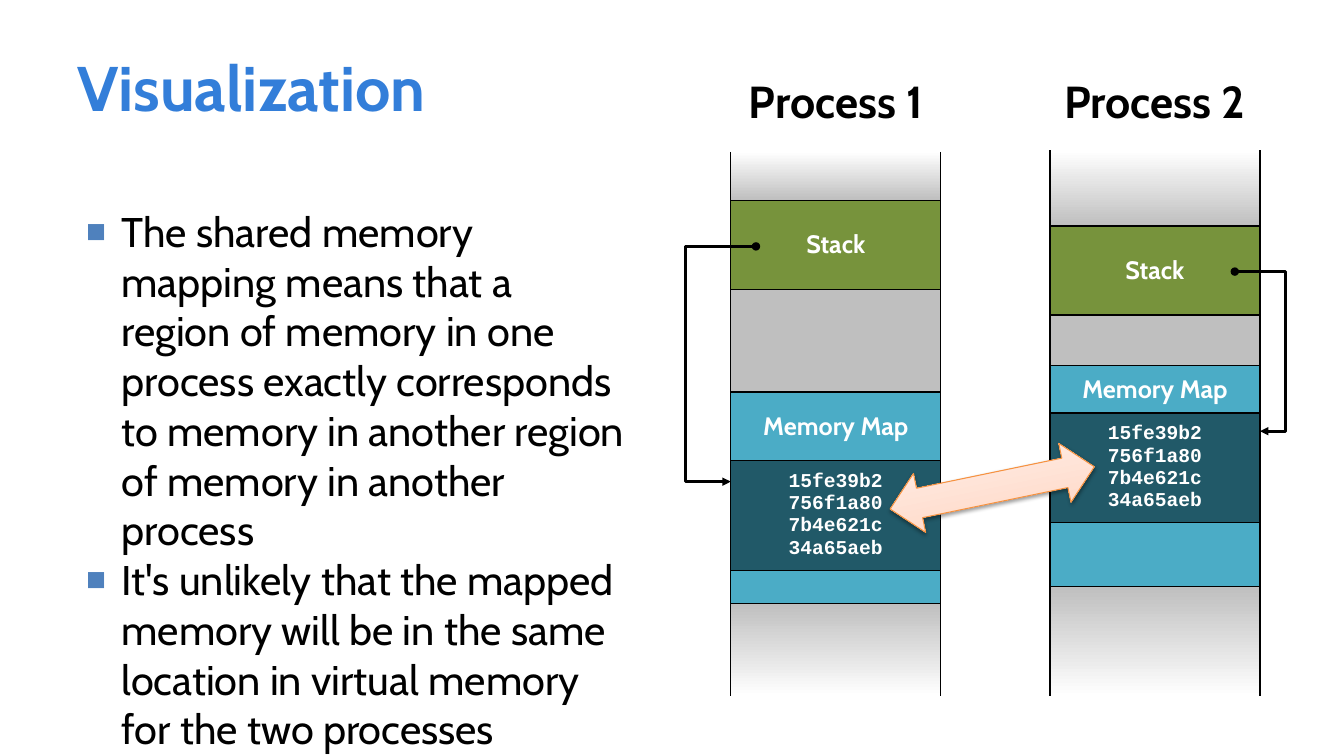
from lxml import etree
from pptx import Presentation
from pptx import util as u
from pptx.dml.color import RGBColor
from pptx.enum import shapes, text
from pptx.oxml.ns import qn

Pt = u.Pt
COLORS = {
    "title": "337ED9", "black": "000000", "white": "FFFFFF",
    "bullet": "4F81BD", "gap": "BFBFBF", "stack": "77933C",
    "map": "4BACC6", "shared": "215968", "arrow_line": "F69240",
    "arrow_dark": "FFD2BD", "arrow_light": "FFF2ED",
}
SHARED_BYTES = "15fe39b2\n756f1a80\n7b4e621c\n34a65aeb"
REGIONS = [
    ("", ("white", "gap"), "LRB"),
    ("Stack", "stack", "LRTB"),
    ("", "gap", "LRTB"),
    ("Memory Map", "map", "LRTB"),
    (SHARED_BYTES, "shared", "LRTB"),
    ("", "map", "LRTB"),
    ("", ("gap", "white"), "LRT"),
]
POINTS = [
    "The shared memory mapping means that a region of memory in one process "
    "exactly corresponds to memory in another region of memory in another process",
    "It's unlikely that the mapped memory will be in the same location in "
    "virtual memory for the two processes",
]


def rgb(name):
    return RGBColor.from_string(COLORS[name])


def add_xml(parent, tag, **attrs):
    el = etree.SubElement(parent, qn(tag))
    for key, value in attrs.items():
        el.set(key, str(value))
    return el


def place(sp, left, top, width, height):
    sp.left, sp.top, sp.width, sp.height = Pt(left), Pt(top), Pt(width), Pt(height)


def set_font(p, size, color, bold=False, name="Cabin"):
    p.font.size, p.font.bold, p.font.name = Pt(size), bold, name
    p.font.color.rgb = rgb(color)


def set_margins(tf, left, top, right, bottom):
    tf.margin_left, tf.margin_top = Pt(left), Pt(top)
    tf.margin_right, tf.margin_bottom = Pt(right), Pt(bottom)


def fill_gradient(fill, first, last, angle):
    fill.gradient()
    fill.gradient_angle = angle
    for stop, color in zip(fill.gradient_stops, (first, last)):
        stop.color.rgb = rgb(color)


def add_title(slide, words):
    sp = slide.shapes.title
    place(sp, 48, 12, 864, 99)
    tf = sp.text_frame
    tf.text = words
    tf.auto_size = text.MSO_AUTO_SIZE.NONE
    tf.vertical_anchor = text.MSO_ANCHOR.MIDDLE
    set_margins(tf, 7.2, 3.6, 3.6, 3.6)
    p = tf.paragraphs[0]
    p.alignment = text.PP_ALIGN.LEFT
    set_font(p, 45, "title", True)


def add_bullets(slide, points):
    sp = slide.placeholders[1]
    place(sp, 48, 140, 408, 364)
    tf = sp.text_frame
    tf.text = "\n".join(points)
    tf.auto_size = text.MSO_AUTO_SIZE.NONE
    tf.vertical_anchor = text.MSO_ANCHOR.TOP
    set_margins(tf, 4.3, 7.2, 7.2, 3.6)
    for p in tf.paragraphs:
        pPr = p._p.get_or_add_pPr()
        pPr.set("marL", str(Pt(34.5)))
        pPr.set("indent", str(-Pt(25.2)))
        add_xml(add_xml(pPr, "a:buClr"), "a:srgbClr", val=COLORS["bullet"])
        add_xml(pPr, "a:buSzPct", val=80000)
        add_xml(pPr, "a:buFont", typeface="Arial")
        add_xml(pPr, "a:buChar", char="■")
        p.space_before = Pt(0)
        set_font(p, 29.6, "black")


def add_heading(slide, words, left):
    sp = slide.shapes.add_textbox(Pt(left), Pt(49), Pt(162), Pt(46))
    tf = sp.text_frame
    tf.word_wrap = True
    tf.text = words
    p = tf.paragraphs[0]
    p.alignment = text.PP_ALIGN.CENTER
    set_font(p, 32, "black", True)


def set_borders(cell, sides):
    tcPr = cell._tc.get_or_add_tcPr()
    for side in "LRTB":
        ln = add_xml(tcPr, "a:ln" + side, w=Pt(1))
        if side in sides:
            add_xml(add_xml(ln, "a:solidFill"), "a:srgbClr", val=COLORS["black"])
        else:
            add_xml(ln, "a:noFill")


def add_memory(slide, left, top, heights):
    frame = slide.shapes.add_table(
        len(REGIONS), 1, Pt(left), Pt(top), Pt(150), Pt(sum(heights)))
    table = frame.table
    table.first_row = table.horz_banding = False
    for i, (height, (words, color, sides)) in enumerate(zip(heights, REGIONS)):
        table.rows[i].height = Pt(height)
        cell = table.cell(i, 0)
        set_margins(cell, 0, 0, 0, 0)
        cell.vertical_anchor = text.MSO_ANCHOR.MIDDLE
        set_borders(cell, sides)
        if isinstance(color, tuple):
            fill_gradient(cell.fill, *color, 270)
        else:
            cell.fill.solid()
            cell.fill.fore_color.rgb = rgb(color)
        if not words:
            continue
        cell.text = words
        size, name = (14, "Courier New") if words == SHARED_BYTES else (18, "Cabin")
        for p in cell.text_frame.paragraphs:
            p.alignment = text.PP_ALIGN.CENTER
            set_font(p, size, "white", True, name)


def add_pointer(slide, x1, y1, x2, y2, bend):
    cn = slide.shapes.add_connector(
        shapes.MSO_CONNECTOR.ELBOW, Pt(x1), Pt(y1), Pt(x2), Pt(y2))
    cn.line.width = Pt(2)
    cn.line.color.rgb = rgb("black")
    spPr = cn._element.spPr
    guides = spPr.find(qn("a:prstGeom")).get_or_add_avLst()
    add_xml(guides, "a:gd", name="adj1", fmla=f"val {round(bend * 100000)}")
    ln = cn.line._get_or_add_ln()
    add_xml(ln, "a:headEnd", type="oval")
    add_xml(ln, "a:tailEnd", type="triangle")
    add_xml(spPr, "a:effectLst")


def add_sharing_arrow(slide):
    sp = slide.shapes.add_shape(
        shapes.MSO_SHAPE.LEFT_RIGHT_ARROW, Pt(634.3), Pt(327), Pt(149), Pt(43))
    sp.rotation = 348.3
    fill_gradient(sp.fill, "arrow_dark", "arrow_light", 90)
    sp.line.color.rgb = rgb("arrow_line")
    sp.line.width = Pt(0.75)
    sp.shadow.inherit = False
    effects = sp._element.spPr.find(qn("a:effectLst"))
    shadow = add_xml(effects, "a:outerShdw", blurRad=Pt(3.1), dist=Pt(1.6),
                     dir=5400000, rotWithShape=0)
    color = add_xml(shadow, "a:srgbClr", val=COLORS["black"])
    add_xml(color, "a:alpha", val=38000)


def main():
    prs = Presentation()
    prs.slide_width, prs.slide_height = Pt(960), Pt(540)
    slide = prs.slides.add_slide(prs.slide_layouts[1])
    add_title(slide, "Visualization")
    add_bullets(slide, POINTS)
    add_memory(slide, 750, 107.5, [54, 63.5, 36, 34, 78.5, 45.5, 78.5])
    add_memory(slide, 522, 108.5, [34.5, 63.5, 73.5, 49, 78.5, 23.5, 66])
    add_pointer(slide, 540, 176, 522, 344, 2.8)
    add_pointer(slide, 882, 194, 900, 308, 2)
    add_sharing_arrow(slide)
    add_heading(slide, "Process 1", 516)
    add_heading(slide, "Process 2", 744)
    prs.save("out.pptx")


if __name__ == "__main__":
    main()
